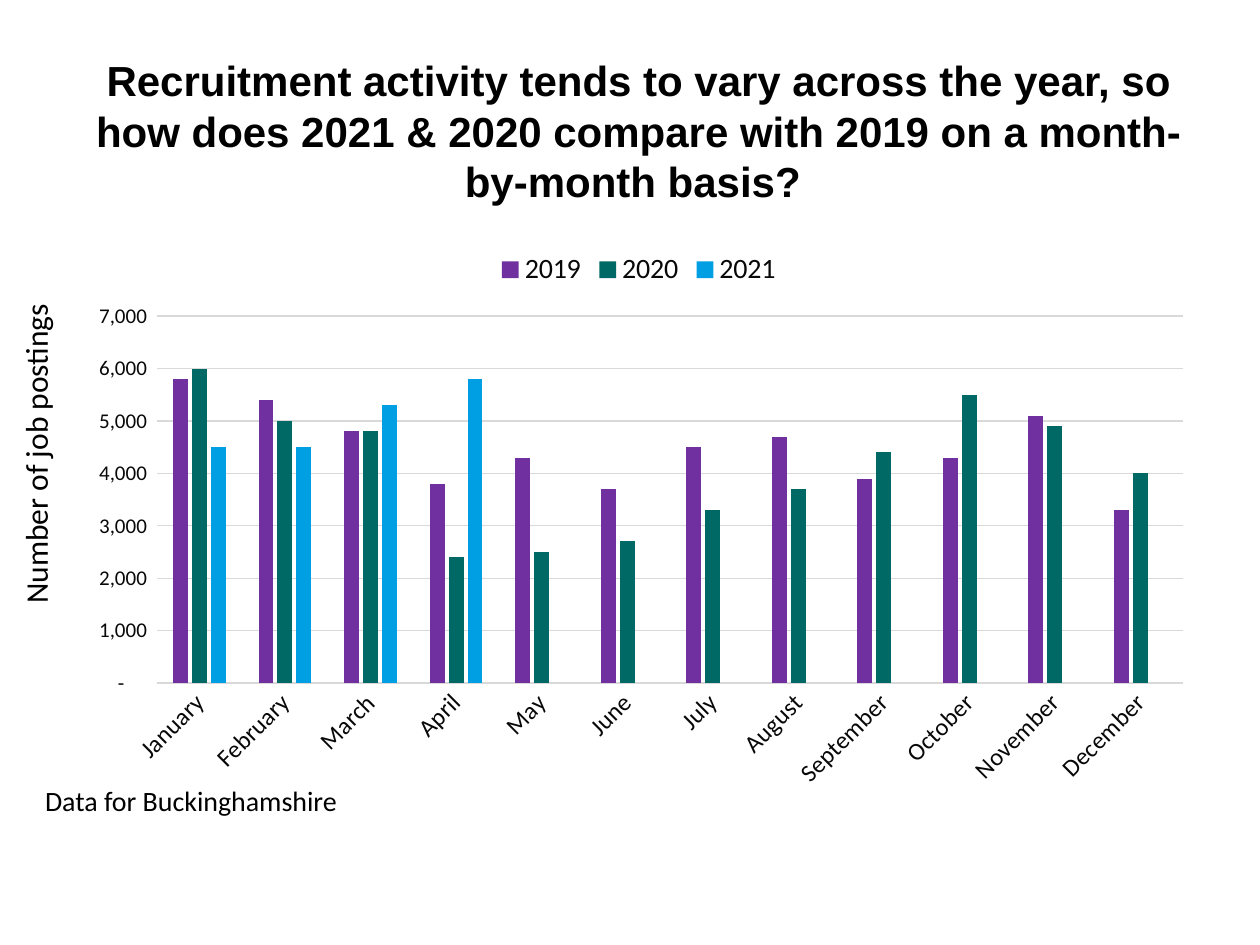
from pptx import Presentation
from pptx.chart.data import CategoryChartData
from pptx.dml.color import RGBColor
from pptx.enum.chart import XL_CHART_TYPE, XL_LEGEND_POSITION, XL_TICK_MARK
from pptx.enum.text import MSO_ANCHOR, PP_ALIGN
from pptx.oxml.ns import qn
from pptx.util import Pt

CLUSTERED = XL_CHART_TYPE.COLUMN_CLUSTERED
LEGEND_TOP = XL_LEGEND_POSITION.TOP
NO_TICK = XL_TICK_MARK.NONE
MIDDLE, TOP = MSO_ANCHOR.MIDDLE, MSO_ANCHOR.TOP
CENTER, LEFT = PP_ALIGN.CENTER, PP_ALIGN.LEFT

COLORS = {
    "text": "000000", "chart text": "080808", "grid": "D9D9D9",
    "2019": "7030A0", "2020": "006965", "2021": "009FE3",
}

TEXTS = [
    {"text": "Recruitment activity tends to vary across the year, so how does "
             "2021 & 2020 compare with 2019 on a month-by-month basis? ",
     "box": (41, 29.5, 648, 90), "anchor": MIDDLE, "align": CENTER,
     "font": {"name": "Arial", "size": Pt(24), "bold": True}},
    {"text": "Data for Buckinghamshire",
     "box": (18.7, 444.2, 272, 26.6), "anchor": TOP, "align": LEFT,
     "font": {"name": "Calibri", "size": Pt(16)}},
    {"text": "Number of job postings", "direction": "vert270",
     "box": (5.8, 149.8, 36, 202.3), "anchor": TOP, "align": LEFT,
     "font": {"name": "Calibri", "size": Pt(18)}},
]

CHART_BOX = (41, 136, 648, 321)
NUMBER_FORMAT = '_-* #,##0_-;\\-* #,##0_-;_-* "-"??_-;_-@_-'
MONTHS = ["January", "February", "March", "April", "May", "June", "July",
          "August", "September", "October", "November", "December"]
POSTINGS = {
    "2019": [5800, 5400, 4800, 3800, 4300, 3700, 4500, 4700, 3900, 4300, 5100, 3300],
    "2020": [6000, 5000, 4800, 2400, 2500, 2700, 3300, 3700, 4400, 5500, 4900, 4000],
    "2021": [4500, 4500, 5300, 5800] + [None] * 8,
}


def color(name):
    return RGBColor.from_string(COLORS[name])


def format_font(font, color_name, values):
    for attribute, value in values.items():
        setattr(font, attribute, value)
    font.color.rgb = color(color_name)


def format_line(line):
    line.color.rgb = color("grid")
    line.width = Pt(0.75)


def add_text(slide, item):
    shape = slide.shapes.add_textbox(*map(Pt, item["box"]))
    frame = shape.text_frame
    frame.word_wrap = True
    frame.vertical_anchor = item["anchor"]
    if "direction" in item:
        frame._txBody.bodyPr.set("vert", item["direction"])
    paragraph = frame.paragraphs[0]
    paragraph.alignment = item["align"]
    run = paragraph.add_run()
    run.text = item["text"]
    format_font(run.font, "text", item["font"])


def add_chart(slide):
    data = CategoryChartData(number_format=NUMBER_FORMAT)
    data.categories = MONTHS
    for year, values in POSTINGS.items():
        data.add_series(year, values)
    chart = slide.shapes.add_chart(CLUSTERED, *map(Pt, CHART_BOX), data).chart
    chart.has_title = False
    format_font(chart.font, "text", {"name": "Calibri", "size": Pt(10)})

    plot = chart.plots[0]
    plot.gap_width, plot.overlap, plot.vary_by_categories = 219, -27, False
    for series in plot.series:
        series.format.fill.solid()
        series.format.fill.fore_color.rgb = color(series.name)

    chart.has_legend = True
    chart.legend.position = LEGEND_TOP
    chart.legend.include_in_layout = False

    months, counts = chart.category_axis, chart.value_axis
    for axis in (months, counts):
        axis.major_tick_mark = axis.minor_tick_mark = NO_TICK
    for font, size in ((months.tick_labels.font, 14), (counts.tick_labels.font, 12),
                       (chart.legend.font, 16)):
        format_font(font, "chart text", {"name": "Calibri", "size": Pt(size)})
    format_line(months.format.line)
    months._element.find(qn("c:txPr")).find(qn("a:bodyPr")).set("rot", "-2700000")

    counts.minimum_scale, counts.maximum_scale, counts.major_unit = 0, 7000, 1000
    counts.has_major_gridlines = True
    format_line(counts.major_gridlines.format.line)
    counts.format.line.fill.background()
    counts.tick_labels.number_format = NUMBER_FORMAT
    counts.tick_labels.number_format_is_linked = False


def main():
    presentation = Presentation()
    presentation.slide_width, presentation.slide_height = Pt(720), Pt(540)
    slide = presentation.slides.add_slide(presentation.slide_layouts[6])
    add_chart(slide)
    for item in TEXTS:
        add_text(slide, item)
    presentation.save("out.pptx")


if __name__ == "__main__":
    main()
